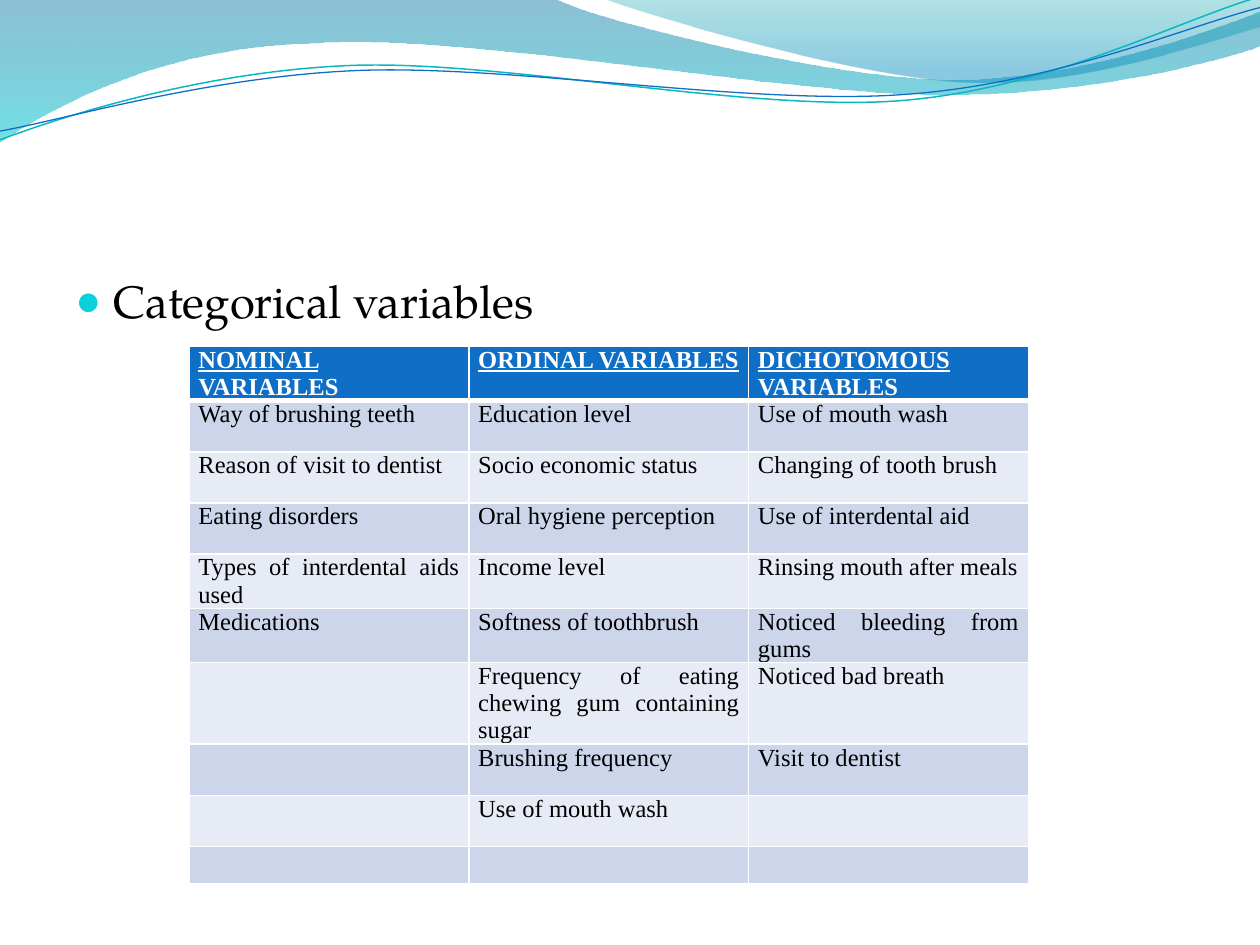
from dataclasses import dataclass
from math import cos, radians, sin

from lxml.etree import SubElement
from pptx import Presentation
from pptx.dml.color import RGBColor as Rgb
from pptx.enum.text import PP_ALIGN as Align
from pptx.oxml import parse_xml
from pptx.oxml.ns import nsdecls, qn
from pptx.util import Cm, Pt


@dataclass(frozen=True)
class Theme:
    heading_font: str = "TeX Gyre Pagella"
    table_font: str = "Times New Roman"
    heading_size: int = 26
    table_size: int = 14
    table_leading: float = 15.5
    ink: str = "000000"
    white: str = "FFFFFF"
    header: str = "0F6FC6"
    bands: tuple = ("CCD5EA", "E7EBF5")
    bullet: str = "0BD0D9"


THEME = Theme()
INCH = 2.54
HEADING = "Categorical variables"
COLUMNS = {
    "NOMINAL VARIABLES": [
        "Way of brushing teeth", "Reason of visit to dentist", "Eating disorders",
        "Types of interdental aids used", "Medications "],
    "ORDINAL VARIABLES": [
        "Education level", "Socio economic status", "Oral hygiene perception",
        "Income level", "Softness of toothbrush",
        "Frequency of eating chewing gum containing sugar",
        "Brushing frequency", "Use of mouth wash"],
    "DICHOTOMOUS VARIABLES": [
        "Use of mouth wash", "Changing of tooth brush", "Use of interdental aid",
        "Rinsing mouth after meals", "Noticed bleeding from gums",
        "Noticed bad breath", "Visit to dentist"],
}
ROW_COUNT = 10
WAVES = [
    ([(0, 0), (4.4, -0.01), (4.76, 0.17, 6.64, 0.63, 7.58, 0.63),
      (8.53, 0.63, 9.58, 0.26, 10, 0.09), (10.01, 0.36),
      (9.83, 0.44, 8.7, 0.76, 7.46, 0.75), (6.22, 0.75, 3.82, 0.28, 2.57, 0.34),
      (1.29, 0.36, 0.46, 0.83, -0.01, 1.13), (0, 0)],
     [(0, "0074A1", 45), (100, "00C6CF", 55)]),
    ([(4.79, -0.01), (5.09, 0.11, 6.82, 0.62, 7.69, 0.65),
      (8.56, 0.69, 9.61, 0.32, 10, 0.21), (10, 0), (4.79, -0.01)],
     [(0, "00A1A9", 30), (80, "008BBF", 45)]),
]
STRAND_TURN = 357.3
STRANDS = [
    ([(0, 1.11), (0.48, 0.93, 1.58, 0.57, 2.77, 0.52),
      (3.95, 0.47, 5.93, 0.89, 7.13, 0.8), (8.33, 0.71, 9.38, 0.15, 9.98, -0.02)],
     (4.99, 0.575), "0AB8BF", 0.85),
    ([(0, 1.04), (0.47, 0.96, 1.64, 0.61, 2.83, 0.56),
      (4.03, 0.51, 5.97, 0.84, 7.17, 0.75), (8.36, 0.67, 9.41, 0.21, 10, 0.06)],
     (4.995, 0.59), "0F6FC6", 0.75),
]


def inches(value):
    return Cm(value * INCH)


def turn_back(step, center):
    angle = radians(-STRAND_TURN)
    turned = []
    for x, y in zip(step[::2], step[1::2]):
        dx, dy = x - center[0], y - center[1]
        turned += [center[0] + dx * cos(angle) - dy * sin(angle),
                   center[1] + dx * sin(angle) + dy * cos(angle)]
    return tuple(turned)


def add_outline(page, steps, close):
    points = [(inches(x), inches(y))
              for step in steps for x, y in zip(step[::2], step[1::2])]
    builder = page.shapes.build_freeform(*points[0], scale=1.0)
    builder.add_line_segments(points[1:], close=close)
    outline = builder.convert_to_shape()
    outline.shadow.inherit = False
    outline.fill.background()
    segments = iter(list(outline.element.iter(qn("a:lnTo"))))
    for step in steps[1:]:
        first = next(segments)
        if len(step) == 6:
            curve = first.makeelement(qn("a:cubicBezTo"))
            first.addprevious(curve)
            for segment in (first, next(segments), next(segments)):
                curve.append(segment[0])
                segment.getparent().remove(segment)
    return outline


def add_wave(page, steps, stops):
    wave = add_outline(page, steps, True)
    wave.line.fill.background()
    marks = "".join(
        f'<a:gs pos="{pos * 1000}"><a:srgbClr val="{color}">'
        f'<a:alpha val="{alpha * 1000}"/></a:srgbClr></a:gs>'
        for pos, color, alpha in stops)
    gradient = parse_xml(
        f'<a:gradFill {nsdecls("a")} rotWithShape="1"><a:gsLst>{marks}</a:gsLst>'
        '<a:lin ang="5400000" scaled="0"/></a:gradFill>')
    plain = wave.element.spPr.find(qn("a:noFill"))
    plain.getparent().replace(plain, gradient)


def add_strand(page, steps, center, color, width):
    strand = add_outline(page, [turn_back(step, center) for step in steps], False)
    strand.rotation = STRAND_TURN
    strand.line.color.rgb = Rgb.from_string(color)
    strand.line.width = Pt(width)


def style_span(span, font, size, color, strong=False):
    span.font.name = font
    span.font.size = Pt(size)
    span.font.color.rgb = Rgb.from_string(color)
    span.font.bold = strong
    span.font.underline = strong


def add_heading(page):
    box = page.shapes.add_textbox(inches(0.5), inches(2.12), inches(9), inches(5.22))
    box.text_frame.word_wrap = True
    box.text_frame.text = HEADING
    para = box.text_frame.paragraphs[0]
    style_span(para.runs[0], THEME.heading_font, THEME.heading_size, THEME.ink)
    props = para._p.get_or_add_pPr()
    props.set("marL", str(inches(0.3)))
    props.set("indent", str(inches(-0.3)))
    tint = SubElement(props, qn("a:buClr"))
    SubElement(tint, qn("a:srgbClr"), val=THEME.bullet)
    SubElement(props, qn("a:buSzPct"), val="95000")
    SubElement(props, qn("a:buFont"), typeface=THEME.table_font)
    SubElement(props, qn("a:buChar"), char="●")


def add_borders(cell, widths):
    props = cell._tc.get_or_add_tcPr()
    for side, width in widths.items():
        border = SubElement(props, qn(f"a:ln{side}"), w=str(Pt(width)))
        fill = SubElement(border, qn("a:solidFill"))
        SubElement(fill, qn("a:srgbClr"), val=THEME.white)


def fill_cell(cell, text, row):
    is_header = row == 0
    cell.margin_left = cell.margin_right = Cm(0.19)
    cell.margin_top = cell.margin_bottom = 0
    add_borders(cell, {"L": 1, "R": 1, "T": 3 if row == 1 else 1, "B": 3 if is_header else 1})
    cell.fill.solid()
    color = THEME.header if is_header else THEME.bands[(row - 1) % 2]
    cell.fill.fore_color.rgb = Rgb.from_string(color)
    if not text:
        return
    cell.text_frame.text = text
    para = cell.text_frame.paragraphs[0]
    para.alignment = Align.JUSTIFY
    para.line_spacing = Pt(THEME.table_leading)
    ink = THEME.white if is_header else THEME.ink
    style_span(para.runs[0], THEME.table_font, THEME.table_size, ink, is_header)


def add_variables_table(page):
    frame = page.shapes.add_table(
        ROW_COUNT, len(COLUMNS), inches(1.5), inches(2.75), inches(6.67), inches(4.46))
    table = frame.table
    for row in table.rows:
        row.height = Cm(1.03)
    table.rows[ROW_COUNT - 1].height = Cm(0.43)
    frame.height = inches(4.46)
    for col, (title, entries) in enumerate(COLUMNS.items()):
        table.columns[col].width = Cm(5.64)
        texts = [title, *entries]
        texts += [""] * (ROW_COUNT - len(texts))
        for row, text in enumerate(texts):
            fill_cell(table.cell(row, col), text, row)


def main():
    """Build the slide of categorical variables and save it."""
    deck = Presentation()
    deck.slide_width, deck.slide_height = Cm(25.4), Cm(19.05)
    page = deck.slides.add_slide(deck.slide_layouts[6])
    for wave in WAVES:
        add_wave(page, *wave)
    for strand in STRANDS:
        add_strand(page, *strand)
    add_heading(page)
    add_variables_table(page)
    deck.save("out.pptx")


if __name__ == "__main__":
    main()
